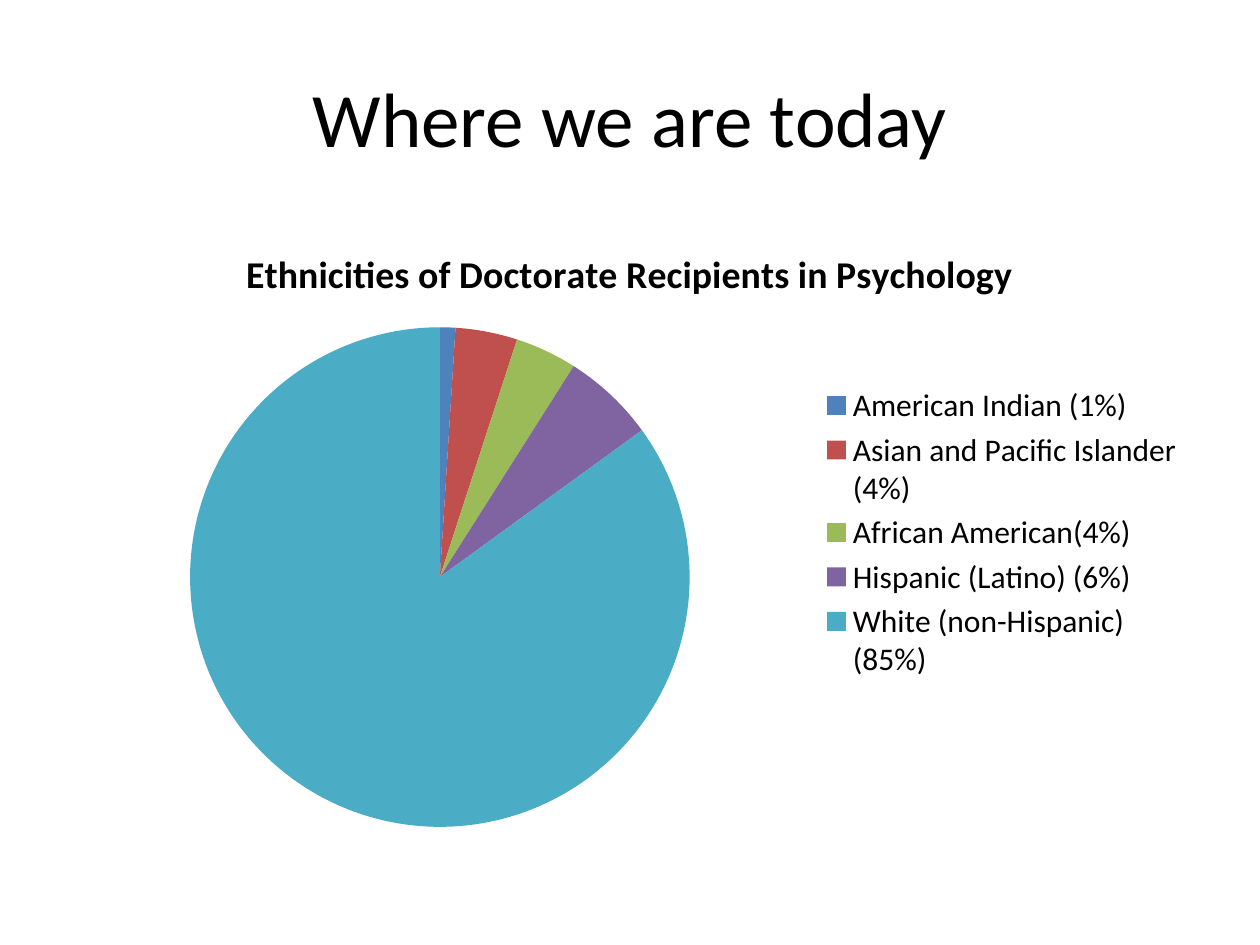
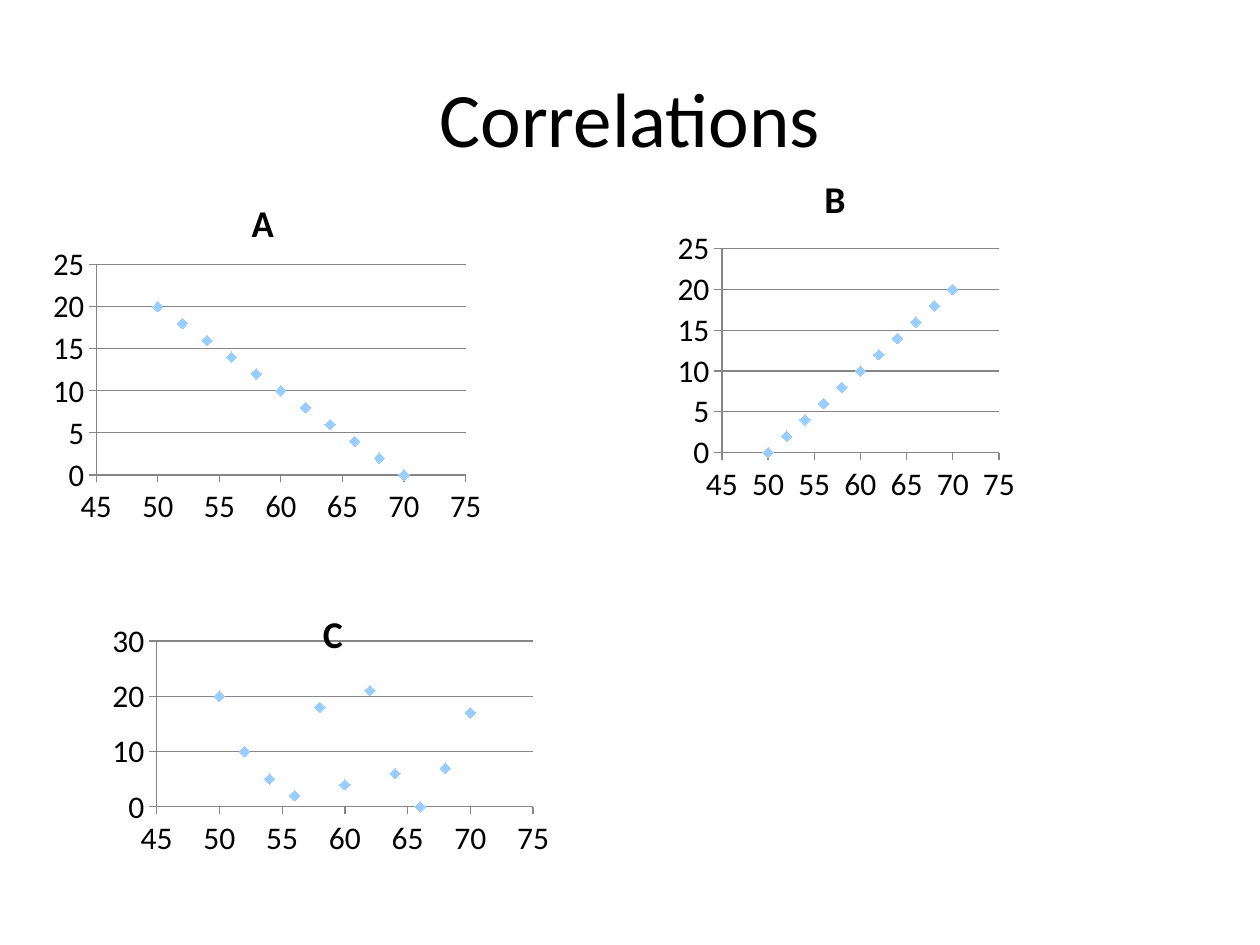
from dataclasses import dataclass

from lxml import etree
from pptx import Presentation
from pptx.chart.data import CategoryChartData, XyChartData
from pptx.dml.color import RGBColor
from pptx.enum.chart import XL_CHART_TYPE, XL_LEGEND_POSITION, XL_MARKER_STYLE, XL_TICK_MARK
from pptx.enum.text import MSO_ANCHOR, PP_ALIGN
from pptx.oxml.ns import qn
from pptx.util import Cm, Pt

PIE = XL_CHART_TYPE.PIE
SCATTER = XL_CHART_TYPE.XY_SCATTER
RIGHT = XL_LEGEND_POSITION.RIGHT
DIAMOND = XL_MARKER_STYLE.DIAMOND
OUTSIDE = XL_TICK_MARK.OUTSIDE
NO_TICK = XL_TICK_MARK.NONE
MIDDLE = MSO_ANCHOR.MIDDLE
CENTER = PP_ALIGN.CENTER

FONT = "Calibri"
BLACK = RGBColor(0x00, 0x00, 0x00)
GREY = RGBColor(0x86, 0x86, 0x86)
SKY = RGBColor(0x99, 0xCC, 0xFF)
BLUE = RGBColor(0x4F, 0x81, 0xBD)
RED = RGBColor(0xC0, 0x50, 0x4D)
GREEN = RGBColor(0x9B, 0xBB, 0x59)
PURPLE = RGBColor(0x80, 0x64, 0xA2)
TEAL = RGBColor(0x4B, 0xAC, 0xC6)


@dataclass(frozen=True)
class Box:
    left: float
    top: float
    width: float
    height: float

    def lengths(self) -> list:
        return [Cm(v) for v in (self.left, self.top, self.width, self.height)]


@dataclass(frozen=True)
class Slice:
    label: str
    value: int
    color: RGBColor


@dataclass(frozen=True)
class Plot:
    title: str
    box: Box
    head: dict
    inner: dict
    values: list
    top: int
    step: int


TITLE = Box(1.27, 0.76, 22.86, 3.18)
PIE_BOX = Box(1.27, 4.45, 22.86, 12.57)
PIE_HEAD = "Ethnicities of Doctorate Recipients in Psychology"
SLICES = [
    Slice("American Indian (1%)", 1, BLUE),
    Slice("Asian and Pacific Islander (4%)", 4, RED),
    Slice("African American(4%)", 4, GREEN),
    Slice("Hispanic (Latino) (6%)", 6, PURPLE),
    Slice("White (non-Hispanic) (85%)", 85, TEAL),
]
PLOTS = [
    Plot("A", Box(1.07, 3.61, 9.96, 7.19), dict(x=0.37, y=0.03),
         dict(x=0.06, y=0.24, w=0.77, h=0.59), list(range(20, -1, -2)), 25, 5),
    Plot("B", Box(13.13, 3.18, 10.16, 7.34), dict(x=0.33, y=0.02),
         dict(x=0.14, y=0.25, w=0.55, h=0.56), list(range(0, 21, 2)), 25, 5),
    Plot("C", Box(1.7, 11.63, 9.73, 5.87), dict(x=0.48, y=0.08),
         dict(x=0.15, y=0.22, w=0.78, h=0.57),
         [20, 10, 5, 2, 18, 4, 21, 6, 0, 7, 17], 30, 10),
]


def new_slide(deck, text: str):
    slide = deck.slides.add_slide(deck.slide_layouts[5])
    title = slide.shapes.title
    title.left, title.top, title.width, title.height = TITLE.lengths()
    title.text_frame.text = text
    title.text_frame.vertical_anchor = MIDDLE
    para = title.text_frame.paragraphs[0]
    para.alignment = CENTER
    style(para.font, 44)
    return slide


def style(font, size: float) -> None:
    font.name = FONT
    font.size = Pt(size)
    font.color.rgb = BLACK


def add_chart(slide, kind, box: Box, data, head: str):
    chart = slide.shapes.add_chart(kind, *box.lengths(), data).chart
    style(chart.font, 18)
    chart.has_title = True
    chart.chart_title.include_in_layout = False
    chart.chart_title.text_frame.text = head
    font = chart.chart_title.text_frame.paragraphs[0].font
    style(font, 21.6)
    font.bold = True
    return chart


def place(node, index: int, spots: dict, inner: bool = False) -> None:
    for old in node.findall(qn("c:layout")):
        node.remove(old)
    layout = etree.Element(qn("c:layout"))
    manual = etree.SubElement(layout, qn("c:manualLayout"))
    parts = {"layoutTarget": "inner"} if inner else {}
    parts |= {"xMode": "edge", "yMode": "edge"} | spots
    for name, value in parts.items():
        etree.SubElement(manual, qn(f"c:{name}")).set("val", str(value))
    node.insert(index, layout)


def add_pie(slide) -> None:
    data = CategoryChartData()
    data.categories = [s.label for s in SLICES]
    data.add_series(PIE_HEAD, [s.value for s in SLICES])
    chart = add_chart(slide, PIE, PIE_BOX, data, PIE_HEAD)
    chart.has_legend = True
    chart.legend.position = RIGHT
    chart.legend.include_in_layout = False
    for i, part in enumerate(SLICES):
        fill = chart.plots[0].series[0].points[i].format.fill
        fill.solid()
        fill.fore_color.rgb = part.color


def set_axis(axis, low: int, high: int, step: int, grid: bool) -> None:
    axis.minimum_scale = low
    axis.maximum_scale = high
    axis.major_unit = step
    axis.major_tick_mark = OUTSIDE
    axis.minor_tick_mark = NO_TICK
    axis.has_major_gridlines = grid
    lines = [axis.format.line]
    if grid:
        lines.append(axis.major_gridlines.format.line)
    for line in lines:
        line.color.rgb = GREY
        line.width = Pt(0.75)


def add_plot(slide, plot: Plot) -> None:
    data = XyChartData()
    points = data.add_series("Series 1")
    for x, y in zip(range(50, 71, 2), plot.values):
        points.add_data_point(x, y)
    chart = add_chart(slide, SCATTER, plot.box, data, plot.title)
    chart.has_legend = False
    set_axis(chart.category_axis, 45, 75, 5, False)
    set_axis(chart.value_axis, 0, plot.top, plot.step, True)
    chart.plots[0].vary_by_categories = False
    series = chart.plots[0].series[0]
    series.format.line.fill.background()
    series.marker.style = DIAMOND
    series.marker.size = 6
    series.marker.format.fill.solid()
    series.marker.format.fill.fore_color.rgb = SKY
    series.marker.format.line.fill.background()
    place(chart.chart_title._element, 1, plot.head)
    place(chart._chartSpace.chart.plotArea, 0, plot.inner, True)


def main() -> None:
    deck = Presentation()
    deck.slide_width, deck.slide_height = Cm(25.4), Cm(19.05)
    add_pie(new_slide(deck, "Where we are today"))
    slide = new_slide(deck, "Correlations")
    for plot in PLOTS:
        add_plot(slide, plot)
    deck.save("out.pptx")


if __name__ == "__main__":
    main()
